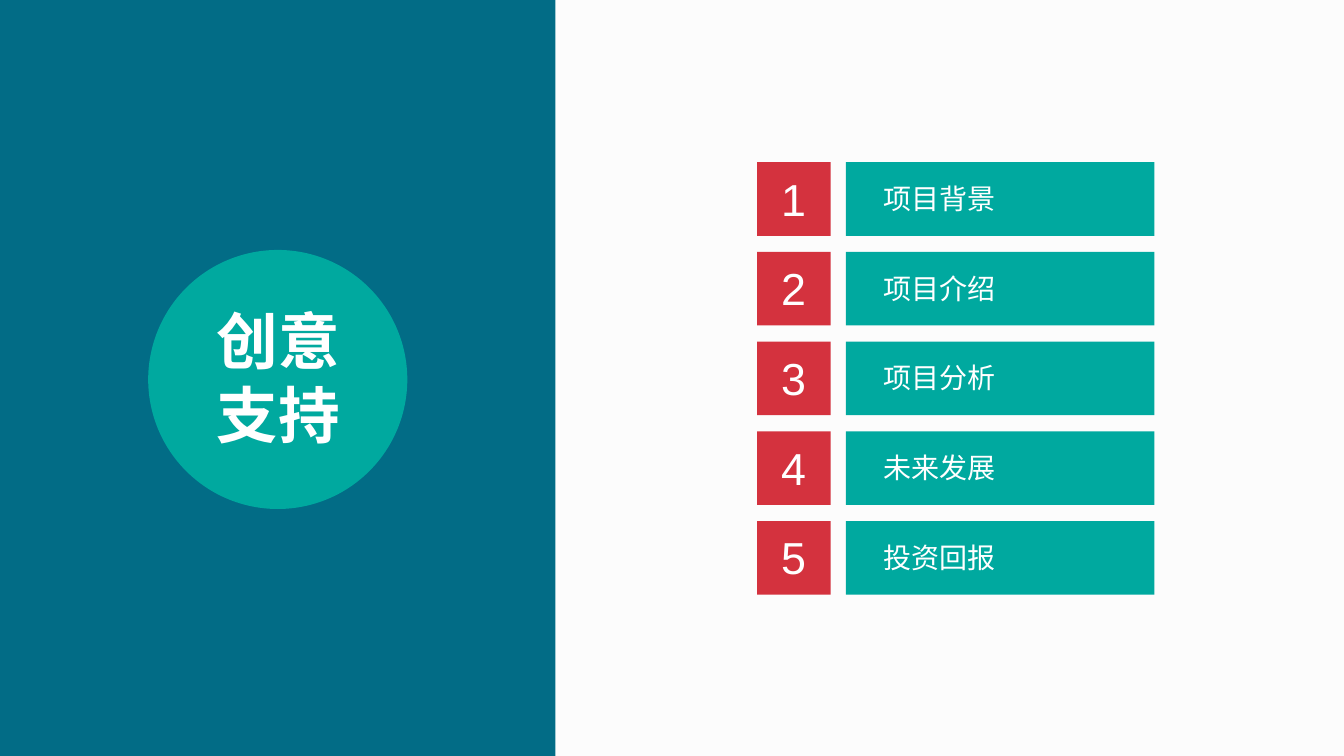
from lxml import etree
from pptx import Presentation
from pptx.dml.color import RGBColor
from pptx.enum.shapes import MSO_SHAPE
from pptx.enum.text import MSO_ANCHOR, MSO_AUTO_SIZE, PP_ALIGN
from pptx.oxml.ns import qn
from pptx.util import Inches, Pt

TITLE_LINES = ["创意", "支持"]
AGENDA = ["项目背景", "项目介绍", "项目分析", "未来发展", "投资回报"]

BACKGROUND = RGBColor(0xFC, 0xFC, 0xFC)
BLUE = RGBColor(0x02, 0x6C, 0x86)
TEAL = RGBColor(0x00, 0xA9, 0x9F)
RED = RGBColor(0xD4, 0x32, 0x3E)
WHITE = RGBColor(0xFF, 0xFF, 0xFF)
CHINESE_FONT = "Noto Sans CJK SC"
NUMBER_FONT = "Arial"

SLIDE_WIDTH, SLIDE_HEIGHT = 13.33, 7.5
PANEL_WIDTH = 5.51
CIRCLE_LEFT, CIRCLE_TOP, CIRCLE_SIZE = 1.47, 2.48, 2.57
ROW_TOP, ROW_PITCH, ROW_HEIGHT = 1.61, 0.89, 0.73
NUMBER_LEFT, BAR_LEFT, BAR_WIDTH = 7.51, 8.39, 3.06


def add_filled(shapes, kind, color, left, top, width, height):
    shape = shapes.add_shape(kind, Inches(left), Inches(top), Inches(width), Inches(height))
    shape.shadow.inherit = False
    shape.fill.solid()
    shape.fill.fore_color.rgb = color
    shape.line.fill.background()
    return shape


def write_lines(shape, lines, size, font_name, alignment, bold=False):
    frame = shape.text_frame
    frame.text = "\n".join(lines)
    for paragraph in frame.paragraphs:
        paragraph.alignment = alignment
        font = paragraph.font
        font.name = font_name
        font.size = Pt(size)
        font.bold = bold
        font.color.rgb = WHITE
        # East Asian text takes its typeface from a:ea
        properties = paragraph._p.pPr.find(qn("a:defRPr"))
        east_asian = etree.SubElement(properties, qn("a:ea"))
        east_asian.set("typeface", font_name)


def add_label(shapes, text, size, font_name, alignment, box, wrap):
    label = shapes.add_textbox(*map(Inches, box))
    label.text_frame.word_wrap = wrap
    label.text_frame.auto_size = MSO_AUTO_SIZE.SHAPE_TO_FIT_TEXT
    write_lines(label, [text], size, font_name, alignment)


def add_agenda_row(slide, number, text):
    top = ROW_TOP + (number - 1) * ROW_PITCH
    shapes = slide.shapes.add_group_shape().shapes
    add_filled(shapes, MSO_SHAPE.RECTANGLE, TEAL, BAR_LEFT, top, BAR_WIDTH, ROW_HEIGHT)
    add_filled(shapes, MSO_SHAPE.RECTANGLE, RED, NUMBER_LEFT, top, ROW_HEIGHT, ROW_HEIGHT)
    add_label(shapes, text, 20, CHINESE_FONT, PP_ALIGN.JUSTIFY,
              (BAR_LEFT + 0.27, top + 0.14, 2.35, 0.44), True)
    add_label(shapes, str(number), 32, NUMBER_FONT, PP_ALIGN.LEFT,
              (NUMBER_LEFT + 0.14, top + 0.04, 0.45, 0.64), False)


def add_title(slide):
    title = slide.shapes.title
    title.left, title.top = Inches(2.04), Inches(2.96)
    title.width, title.height = Inches(1.44), Inches(1.58)
    title.text_frame.word_wrap = False
    title.text_frame.auto_size = MSO_AUTO_SIZE.SHAPE_TO_FIT_TEXT
    title.text_frame.vertical_anchor = MSO_ANCHOR.TOP
    write_lines(title, TITLE_LINES, 44, CHINESE_FONT, PP_ALIGN.CENTER, bold=True)
    # Bring the title in front of the circle
    slide.shapes._spTree.append(title._element)


def main():
    presentation = Presentation()
    presentation.slide_width = Inches(SLIDE_WIDTH)
    presentation.slide_height = Inches(SLIDE_HEIGHT)
    slide = presentation.slides.add_slide(presentation.slide_layouts.get_by_name("Title Only"))
    slide.background.fill.solid()
    slide.background.fill.fore_color.rgb = BACKGROUND

    add_filled(slide.shapes, MSO_SHAPE.RECTANGLE, BLUE, 0, 0, PANEL_WIDTH, SLIDE_HEIGHT)
    add_filled(slide.shapes, MSO_SHAPE.OVAL, TEAL,
               CIRCLE_LEFT, CIRCLE_TOP, CIRCLE_SIZE, CIRCLE_SIZE)
    add_title(slide)
    for number, text in enumerate(AGENDA, start=1):
        add_agenda_row(slide, number, text)

    presentation.save("out.pptx")


if __name__ == "__main__":
    main()
